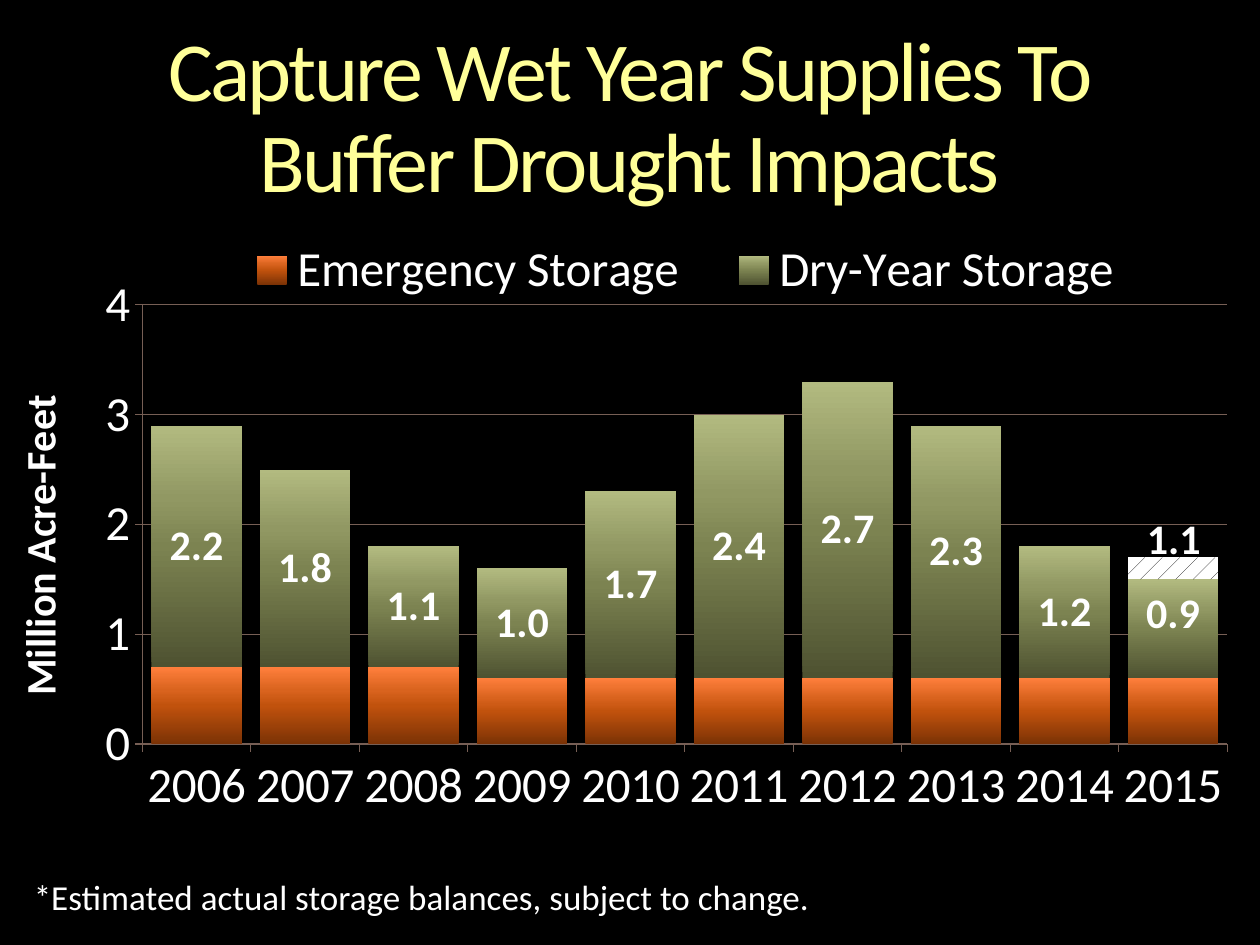
from pptx import Presentation
from pptx.chart.data import CategoryChartData
from pptx.dml.color import RGBColor
from pptx.enum.chart import XL_CHART_TYPE, XL_LABEL_POSITION, XL_LEGEND_POSITION, XL_TICK_MARK
from pptx.enum.dml import MSO_PATTERN
from pptx.enum.text import MSO_ANCHOR, MSO_AUTO_SIZE, PP_ALIGN
from pptx.oxml import parse_xml
from pptx.oxml.ns import nsdecls, qn
from pptx.util import Inches, Pt

STACKED = XL_CHART_TYPE.COLUMN_STACKED
LABEL_CENTER = XL_LABEL_POSITION.CENTER
LEGEND_TOP = XL_LEGEND_POSITION.TOP
TICK_OUTSIDE = XL_TICK_MARK.OUTSIDE
DOTS = MSO_PATTERN.PERCENT_5
TOP = MSO_ANCHOR.TOP
NO_FIT = MSO_AUTO_SIZE.NONE
LEFT, CENTER = PP_ALIGN.LEFT, PP_ALIGN.CENTER

BLACK = RGBColor(0x00, 0x00, 0x00)
WHITE = RGBColor(0xFF, 0xFF, 0xFF)
BROWN = RGBColor(0x77, 0x5F, 0x55)
GREEN = RGBColor(0x00, 0xFF, 0x00)

YELLOWS = [
    (0, RGBColor(0xFF, 0xFF, 0xB9)),
    (36, RGBColor(0xFF, 0xFF, 0x99)),
    (86, RGBColor(0xF6, 0xAE, 0x1E)),
]
ORANGES = [
    (0, RGBColor(0x7B, 0x32, 0x05)),
    (50, RGBColor(0xC1, 0x52, 0x0D)),
    (70, RGBColor(0xD9, 0x63, 0x1E)),
    (100, RGBColor(0xFF, 0x7F, 0x3C)),
]
OLIVES = [
    (0, RGBColor(0x4E, 0x52, 0x31)),
    (50, RGBColor(0x7C, 0x83, 0x51)),
    (70, RGBColor(0x91, 0x98, 0x63)),
    (100, RGBColor(0xB2, 0xBA, 0x80)),
]

YEARS = [str(year) for year in range(2006, 2016)]
EMERGENCY = [0.7] * 3 + [0.6] * 7
DRY_YEAR = [2.2, 1.8, 1.1, 1.0, 1.7, 2.4, 2.7, 2.3, 1.2, 0.9]
ESTIMATE = [0] * 9 + [0.2]


def gradient(stops, angle):
    marks = "".join(
        f'<a:gs pos="{share * 1000}"><a:srgbClr val="{color}"/></a:gs>' for share, color in stops
    )
    return parse_xml(
        f'<a:gradFill {nsdecls("a")}><a:gsLst>{marks}</a:gsLst>'
        f'<a:lin ang="{angle * 60000}" scaled="0"/></a:gradFill>'
    )


def manual_layout(**values):
    parts = "".join(f'<c:{name} val="{value}"/>' for name, value in values.items())
    return parse_xml(
        f'<c:layout {nsdecls("c")}><c:manualLayout>{parts}</c:manualLayout></c:layout>'
    )


class SlideBuilder:
    font_name = "Calibri"
    columns, rows = 100, 75

    def __init__(self, presentation):
        self.cell_width = presentation.slide_width / self.columns
        self.cell_height = presentation.slide_height / self.rows
        self.slide = presentation.slides.add_slide(presentation.slide_layouts[5])
        self.slide.background.fill.solid()
        self.slide.background.fill.fore_color.rgb = BLACK

    def place(self, column, row, width, height):
        return (
            round(column * self.cell_width),
            round(row * self.cell_height),
            round(width * self.cell_width),
            round(height * self.cell_height),
        )

    def style(self, font, size, bold=False):
        font.name, font.size, font.bold = self.font_name, Pt(size), bold
        font.color.rgb = WHITE

    def title(self, text, area):
        shape = self.slide.shapes.title
        shape.left, shape.top, shape.width, shape.height = self.place(*area)
        frame = shape.text_frame
        frame.text = text
        frame.auto_size, frame.vertical_anchor, frame.word_wrap = NO_FIT, TOP, True
        paragraph = frame.paragraphs[0]
        paragraph.alignment, paragraph.line_spacing = CENTER, 0.9
        font = paragraph.runs[0].font
        font.name, font.size = self.font_name, Pt(48)
        properties = paragraph.runs[0]._r.get_or_add_rPr()
        properties.set("spc", "-150")
        properties.insert(0, gradient(YELLOWS, 90))

    def text(self, text, area, size, bold=False, alignment=LEFT):
        frame = self.slide.shapes.add_textbox(*self.place(*area)).text_frame
        frame.word_wrap = True
        frame.text = text
        frame.paragraphs[0].alignment = alignment
        self.style(frame.paragraphs[0].runs[0].font, size, bold)

    def chart(self, area, categories, series):
        data = CategoryChartData(number_format="0.0")
        data.categories = categories
        for name, values in series:
            data.add_series(name, values)
        chart = self.slide.shapes.add_chart(STACKED, *self.place(*area), data).chart
        self.style(chart.font, 18)
        chart.has_title = False
        plot = chart.plots[0]
        plot.gap_width, plot.overlap, plot.vary_by_categories = 20, 100, False
        plot_area = chart._chartSpace.chart.plotArea
        for layout in plot_area.findall(qn("c:layout")):
            plot_area.remove(layout)
        plot_area.insert(0, manual_layout(
            layoutTarget="inner", xMode="edge", yMode="edge", x=0.114, y=0.18, w=0.861, h=0.634))
        return chart

    def axis(self, axis):
        axis.major_tick_mark = TICK_OUTSIDE
        self.style(axis.tick_labels.font, 28)
        self.line(axis.format.line)

    def line(self, line):
        line.color.rgb = BROWN
        line.width = Pt(0.75)

    def value_axis(self, axis, title, maximum):
        self.axis(axis)
        axis.minimum_scale, axis.maximum_scale, axis.major_unit = 0, maximum, 1
        axis.tick_labels.number_format = "0"
        axis.tick_labels.number_format_is_linked = False
        self.line(axis.major_gridlines.format.line)
        frame = axis.axis_title.text_frame
        frame.text = title
        self.style(frame.paragraphs[0].runs[0].font, 24, True)
        frame._txBody.bodyPr.set("rot", "-5400000")
        frame._txBody.bodyPr.set("vert", "horz")

    def legend(self, chart, hidden_entry):
        chart.has_legend = True
        legend = chart.legend
        legend.position, legend.include_in_layout = LEGEND_TOP, False
        self.style(legend.font, 28)
        entry = parse_xml(
            f'<c:legendEntry {nsdecls("c")}><c:idx val="{hidden_entry}"/>'
            '<c:delete val="1"/></c:legendEntry>'
        )
        position = legend._element.find(qn("c:legendPos"))
        position.addnext(entry)
        entry.addnext(manual_layout(xMode="edge", yMode="edge", x=0.17, y=0.08, w=0.75, h=0.1))

    def data_labels(self, series, raised_point):
        labels = series.data_labels
        labels.show_value = True
        labels.number_format, labels.number_format_is_linked = "#,##0.0", False
        labels.position = LABEL_CENTER
        self.style(labels.font, 24, True)
        label = series.points[raised_point].data_label
        label.position = LABEL_CENTER
        self.style(label.font, 24, True)
        index = labels._element.find(qn("c:dLbl")).find(qn("c:idx"))
        index.addnext(manual_layout(x=0, y=-0.02))


def main():
    presentation = Presentation()
    presentation.slide_width, presentation.slide_height = Inches(10), Inches(7.5)
    builder = SlideBuilder(presentation)

    chart = builder.chart((-0.1, 14.3, 100, 55), YEARS, [
        ("Emergency Storage", EMERGENCY),
        ("Dry-Year Storage", DRY_YEAR),
        ("Series 3", ESTIMATE),
    ])
    builder.axis(chart.category_axis)
    builder.value_axis(chart.value_axis, "Million Acre-Feet", 4)
    builder.legend(chart, hidden_entry=2)

    emergency, dry_year, estimate = chart.plots[0].series
    for series, stops in ((emergency, ORANGES), (dry_year, OLIVES)):
        series._element.get_or_add_spPr().insert(0, gradient(stops, 270))
    builder.data_labels(dry_year, raised_point=9)
    estimate.format.fill.solid()
    estimate.format.fill.fore_color.rgb = GREEN
    hatch = estimate.points[9].format.fill
    hatch.patterned()
    hatch.pattern = DOTS
    hatch.fore_color.rgb, hatch.back_color.rgb = BLACK, WHITE

    builder.title("Capture Wet Year Supplies To Buffer Drought Impacts", (4.1, 1.8, 91.7, 11.5))
    builder.text("*Estimated actual storage balances, subject to change.", (1.7, 69, 91.7, 4.4), 20)
    builder.text("1.1", (89.4, 40.2, 7.5, 5), 24, True, CENTER)
    presentation.save("out.pptx")


if __name__ == "__main__":
    main()
